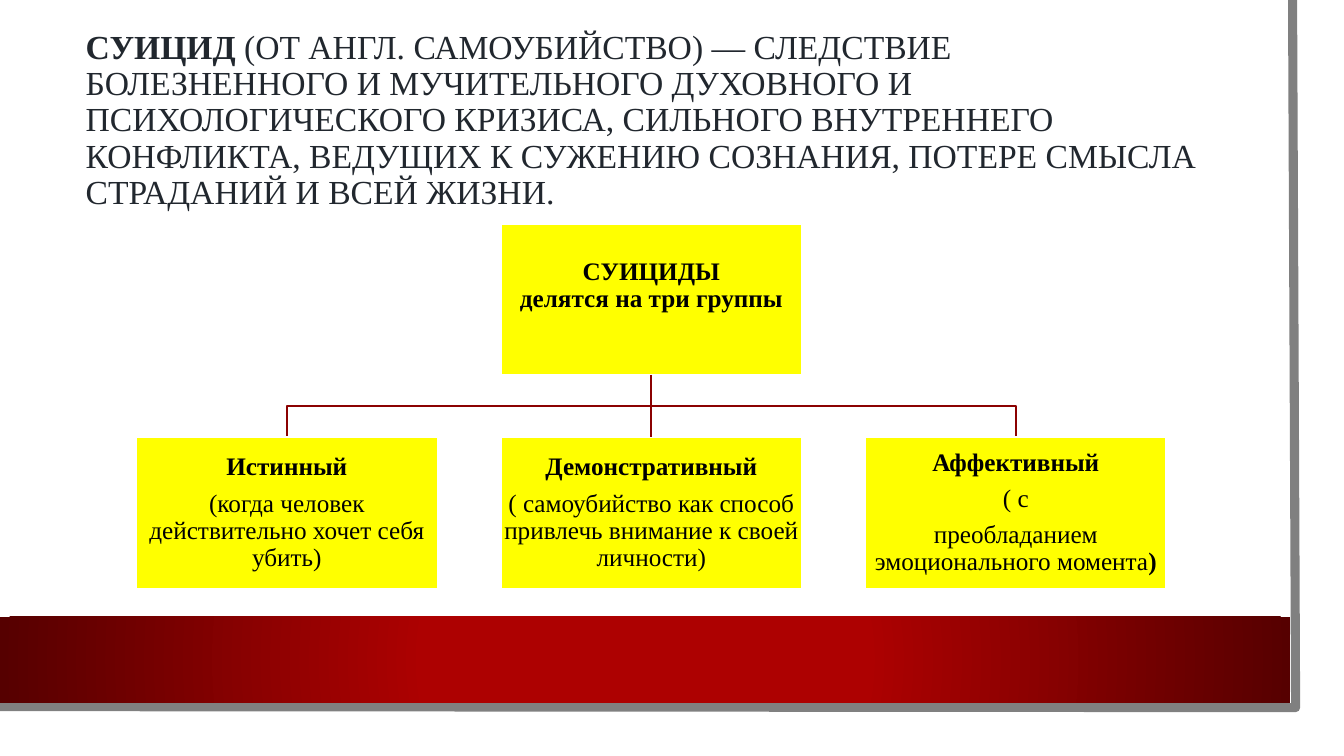
from lxml import etree
from pptx import Presentation
from pptx.dml.color import RGBColor
from pptx.enum.shapes import MSO_CONNECTOR, MSO_SHAPE
from pptx.enum.text import MSO_ANCHOR, MSO_AUTO_SIZE, PP_ALIGN
from pptx.oxml import parse_xml
from pptx.oxml.ns import nsdecls, qn
from pptx.util import Inches, Pt

COLORS = {
    "title": "21272E",
    "text": "000000",
    "box": "FFFF00",
    "box_edge": "FFFFFF",
    "branch": "8B0101",
    "frame": "808080",
    "band_core": "AD0101",
    "band_rim": "560000",
}
FONT = "Times New Roman"
LEFT, TOP = 1.35, 2.22
COLUMN_STEP, ROW_STEP = 3.615, 2.12
BOX_WIDTH, BOX_HEIGHT = 2.99, 1.5

DEFINITION = [
    ("СУИЦИД", True),
    (" (ОТ АНГЛ. САМОУБИЙСТВО) — СЛЕДСТВИЕ БОЛЕЗНЕННОГО И МУЧИТЕЛЬНОГО "
     "ДУХОВНОГО И ПСИХОЛОГИЧЕСКОГО КРИЗИСА, СИЛЬНОГО ВНУТРЕННЕГО КОНФЛИКТА, "
     "ВЕДУЩИХ К СУЖЕНИЮ СОЗНАНИЯ, ПОТЕРЕ СМЫСЛА СТРАДАНИЙ И ВСЕЙ ЖИЗНИ.", False),
]
ROOT = [[("СУИЦИДЫ\nделятся на три группы", True)]]
GROUPS = [
    [[("Истинный", True)],
     [("(когда человек действительно хочет себя убить)", False)]],
    [[("Демонстративный", True)],
     [("( самоубийство как способ привлечь внимание к своей личности)", False)]],
    [[("Аффективный", True)],
     [("( с", False)],
     [("преобладанием эмоционального момента", False), (")", True)]],
]


def color(name):
    return RGBColor.from_string(COLORS[name])


def set_line(shape, name, width):
    shape.line.color.rgb = color(name)
    shape.line.width = Pt(width)


def write_paragraph(paragraph, runs, size, name, align):
    """Fill a paragraph from (text, bold) pairs; a newline is a line break."""
    for text, bold in runs:
        for number, part in enumerate(text.split("\n")):
            if number:
                paragraph.add_line_break()
            run = paragraph.add_run()
            run.text = part
            run.font.bold = bold
    paragraph.alignment = align
    paragraph.line_spacing = 0.9
    paragraph.font.name = FONT
    paragraph.font.size = Pt(size)
    paragraph.font.color.rgb = color(name)


def add_polyline(slide, points, name, width):
    start, *rest = [(Inches(x), Inches(y)) for x, y in points]
    builder = slide.shapes.build_freeform(*start)
    builder.add_line_segments(rest, close=False)
    line = builder.convert_to_shape()
    line.shadow.inherit = False
    line.fill.background()
    set_line(line, name, width)


def add_band(slide):
    """Red band, bright in the middle and darker towards both ends."""
    band = slide.shapes.add_shape(
        MSO_SHAPE.RECTANGLE, 0, Inches(6.12), Inches(12.8), Inches(0.85))
    band.shadow.inherit = False
    band.line.fill.background()
    gradient = parse_xml(
        f'<a:gradFill {nsdecls("a")} rotWithShape="1"><a:gsLst>'
        f'<a:gs pos="34000"><a:srgbClr val="{COLORS["band_core"]}"/></a:gs>'
        f'<a:gs pos="100000"><a:srgbClr val="{COLORS["band_rim"]}"/></a:gs>'
        '</a:gsLst><a:path path="circle">'
        '<a:fillToRect l="50000" t="50000" r="50000" b="50000"/>'
        '</a:path></a:gradFill>')
    band._element.spPr.find(qn("a:prstGeom")).addnext(gradient)


def add_title(slide):
    title = slide.shapes.title
    title.left, title.top = Inches(0.75), Inches(0.75)
    title.width, title.height = Inches(11.37), Inches(1.26)
    frame = title.text_frame
    frame.auto_size = MSO_AUTO_SIZE.NONE
    frame.word_wrap = True
    frame.vertical_anchor = MSO_ANCHOR.MIDDLE
    frame.margin_bottom = Inches(0.41)
    write_paragraph(frame.paragraphs[0], DEFINITION, 24, "title", PP_ALIGN.LEFT)


def add_box(slide, column, row, paragraphs, bottom_margin=0.01):
    box = slide.shapes.add_shape(
        MSO_SHAPE.RECTANGLE,
        Inches(LEFT + column * COLUMN_STEP), Inches(TOP + row * ROW_STEP),
        Inches(BOX_WIDTH), Inches(BOX_HEIGHT))
    box.shadow.inherit = False
    box.fill.solid()
    box.fill.fore_color.rgb = color("box")
    set_line(box, "box_edge", 1.5)
    frame = box.text_frame
    frame.word_wrap = True
    frame.vertical_anchor = MSO_ANCHOR.MIDDLE
    frame.margin_left = frame.margin_right = frame.margin_top = Inches(0.01)
    frame.margin_bottom = Inches(bottom_margin)
    for number, runs in enumerate(paragraphs):
        paragraph = frame.add_paragraph() if number else frame.paragraphs[0]
        write_paragraph(paragraph, runs, 18, "text", PP_ALIGN.CENTER)
        paragraph.space_after = Pt(6.3)
    return box


def add_trunk(slide, root, group):
    trunk = slide.shapes.add_connector(MSO_CONNECTOR.STRAIGHT, 0, 0, 0, 0)
    trunk.begin_connect(root, 2)
    trunk.end_connect(group, 0)
    set_line(trunk, "branch", 1.5)
    etree.SubElement(trunk._element.spPr, qn("a:effectLst"))


def add_branch(slide, column):
    """Elbow from the root box down to an outer group box."""
    root_x, group_x = (LEFT + c * COLUMN_STEP + BOX_WIDTH / 2 for c in (1, column))
    start, end = TOP + BOX_HEIGHT, TOP + ROW_STEP
    middle = (start + end) / 2
    add_polyline(slide, [(root_x, start), (root_x, middle),
                         (group_x, middle), (group_x, end)], "branch", 1.5)


def main():
    presentation = Presentation()
    presentation.slide_width = Inches(13.33)
    presentation.slide_height = Inches(7.5)
    slide = presentation.slides.add_slide(presentation.slide_layouts[5])

    add_polyline(slide, [(12.82, 0), (12.85, 7.02), (-0.03, 7.01)], "frame", 6.5)
    add_band(slide)
    add_title(slide)
    for column in (0, 2):
        add_branch(slide, column)
    root = add_box(slide, 1, 0, ROOT, bottom_margin=0.28)
    groups = [add_box(slide, column, 1, paragraphs)
              for column, paragraphs in enumerate(GROUPS)]
    add_trunk(slide, root, groups[1])

    presentation.save("out.pptx")


if __name__ == "__main__":
    main()
